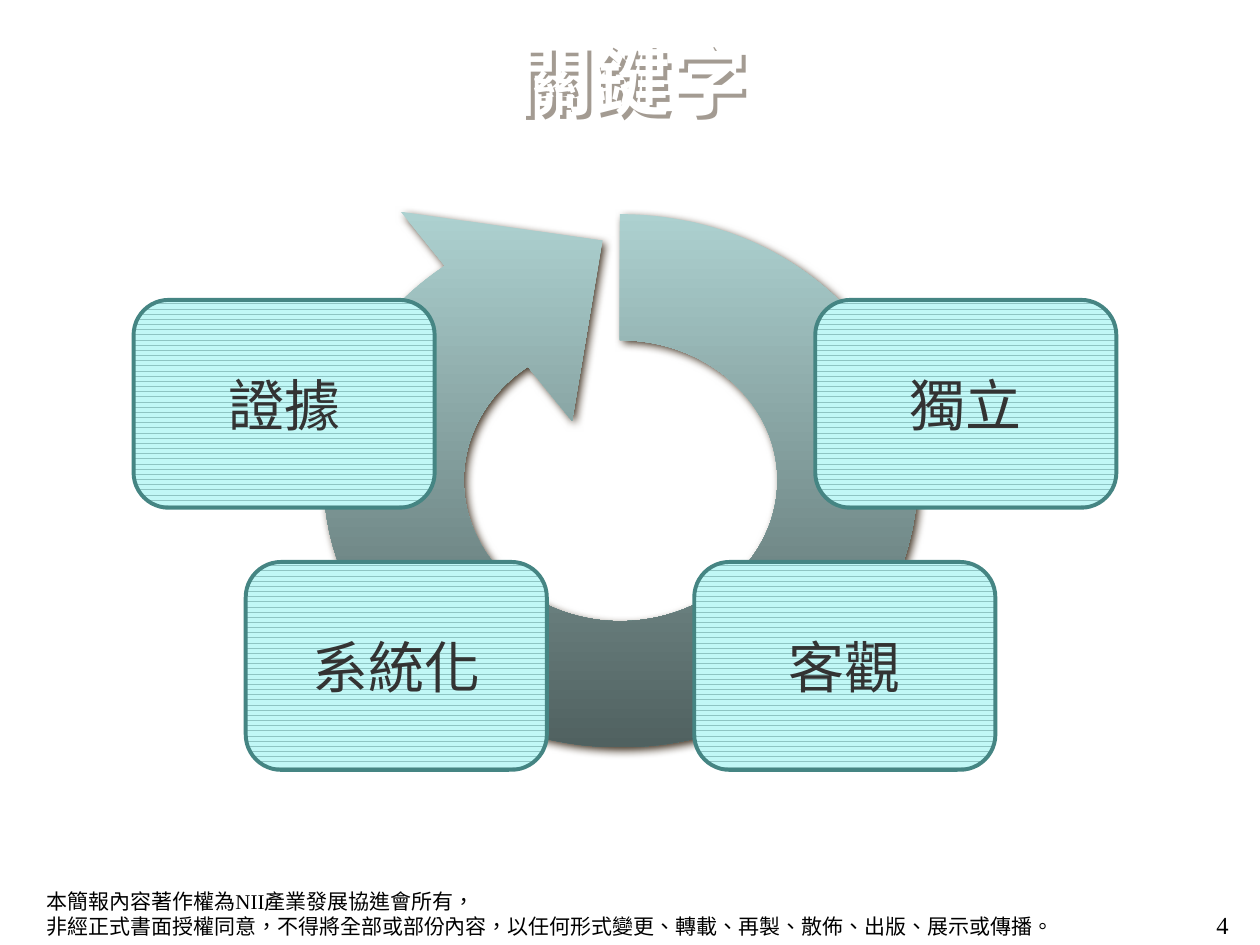
from dataclasses import dataclass

from lxml import etree
from pptx import Presentation
from pptx.dml.color import RGBColor
from pptx.enum.dml import MSO_PATTERN as Pattern
from pptx.enum.lang import MSO_LANGUAGE_ID as Lang
from pptx.enum.shapes import MSO_SHAPE as Shape
from pptx.enum.text import MSO_ANCHOR as Anchor, PP_ALIGN as Align
from pptx.oxml.ns import qn
from pptx.util import Inches, Pt

SERIF, SANS = "Times New Roman", "Arial"
BASE = {"language_id": Lang.TRADITIONAL_CHINESE}
TITLE = BASE | {"name": SANS, "size": Pt(44), "bold": True}
LABEL = BASE | {"name": SANS, "size": Pt(32)}
NOTE = BASE | {"name": SERIF, "size": Pt(12)}
PAGE = BASE | {"name": SERIF, "size": Pt(14)}


@dataclass
class Card:
    text: str
    left: float
    top: float


CARDS = [
    Card("獨立", 6.47, 2.38),
    Card("證據", 1.06, 2.38),
    Card("系統化", 1.95, 4.46),
    Card("客觀", 5.51, 4.46),
]
CARD_SIZE = (2.39, 1.65)

# Ring outline: one point is a line, three points are a curve.
MID = (4.925, 3.805)
START = (4.19, 2.91)
RING = [
    [(3.87, 3.12), (3.68, 3.46), (3.68, 3.81)],
    [(3.68, 4.43), (4.24, 4.93), (4.92, 4.93)],
    [(5.61, 4.93), (6.17, 4.43), (6.17, 3.81)],
    [(6.17, 3.2), (5.61, 2.7), (4.92, 2.7)],
    [(4.92, 1.7)],
    [(6.23, 1.7), (7.28, 2.65), (7.28, 3.81)],
    [(7.28, 4.98), (6.23, 5.93), (4.92, 5.93)],
    [(3.62, 5.93), (2.57, 4.98), (2.57, 3.81)],
    [(2.57, 3.14), (2.93, 2.51), (3.53, 2.11)],
    [(3.18, 1.68)],
    [(4.78, 1.91)],
    [(4.54, 3.34)],
]


def rgb(code: str) -> RGBColor:
    return RGBColor.from_string(code)


def write(shape, text: str, form: dict, color: str, align, anchor) -> None:
    frame = shape.text_frame
    frame.word_wrap = True
    frame.vertical_anchor = anchor
    frame.text = text
    para = frame.paragraphs[0]
    para.alignment = align
    for run in para.runs:
        for key, value in form.items():
            setattr(run.font, key, value)
        run.font.color.rgb = rgb(color)


def add_text(slide, box: tuple, text: str, form: dict, color: str = "000000",
             align=Align.LEFT, anchor=Anchor.TOP):
    shape = slide.shapes.add_textbox(*map(Inches, box))
    write(shape, text, form, color, align, anchor)
    return shape


def cast(shape, color: str, blur: float, dist: float) -> None:
    """Add an outer shadow falling to the lower right; lengths in points."""
    shape.shadow.inherit = False
    shade = etree.SubElement(
        shape._element.spPr.find(qn("a:effectLst")), qn("a:outerShdw"),
        blurRad=str(Pt(blur)), dist=str(Pt(dist)), dir=str(45 * 60000),
        algn="ctr", rotWithShape="0")
    etree.SubElement(shade, qn("a:srgbClr"), val=color)


def turn(point: tuple) -> tuple:
    """Turn a point a quarter back, to be undone by the shape's rotation."""
    x, y = point
    return Inches(MID[0] + y - MID[1]), Inches(MID[1] - x + MID[0])


def bend(shape, parts: list) -> None:
    """Join each run of three line points into one curve."""
    lines = iter(list(shape._element.spPr.iter(qn("a:lnTo"))))
    for part in parts:
        first, *rest = [next(lines) for _ in part]
        if rest:
            first.tag = qn("a:cubicBezTo")
            for line in rest:
                first.append(line[0])
                line.getparent().remove(line)


def add_ring(slide) -> None:
    path = slide.shapes.build_freeform(*turn(START))
    path.add_line_segments([turn(p) for part in RING for p in part], close=True)
    ring = path.convert_to_shape()
    bend(ring, RING)
    ring.rotation = 90
    ring.line.fill.background()
    ring.fill.gradient()
    ring.fill.gradient_angle = 0
    for stop, code in zip(ring.fill.gradient_stops, ("ADD1D0", "506160")):
        stop.color.rgb = rgb(code)
    cast(ring, "463828", 5, 2.8)


def add_card(slide, card: Card) -> None:
    box = slide.shapes.add_shape(
        Shape.ROUNDED_RECTANGLE, *map(Inches, (card.left, card.top, *CARD_SIZE)))
    box.adjustments[0] = 0.17
    box.shadow.inherit = False
    box.fill.patterned()
    box.fill.pattern = Pattern.DARK_HORIZONTAL
    box.fill.fore_color.rgb = rgb("C1F7F6")
    box.fill.back_color.rgb = rgb("8EC4C3")
    box.line.color.rgb = rgb("458583")
    box.line.width = Pt(2.25)
    write(box, card.text, LABEL, "333333", Align.CENTER, Anchor.MIDDLE)


def main() -> None:
    deck = Presentation()
    deck.slide_width, deck.slide_height = Inches(10), Inches(7.5)
    slide = deck.slides.add_slide(deck.slide_layouts[6])

    add_text(slide, (0.27, 7, 8.82, 0.5),
             "本簡報內容著作權為NII產業發展協進會所有，\v"
             "非經正式書面授權同意，不得將全部或部份內容，"
             "以任何形式變更、轉載、再製、散佈、出版、展示或傳播。", NOTE)
    add_text(slide, (7.52, 7.17, 2.33, 0.52), "4", PAGE, align=Align.RIGHT)
    title = add_text(slide, (0.04, 0.13, 9.96, 0.99), "關鍵字", TITLE, "FFFFFF",
                     Align.CENTER, Anchor.MIDDLE)
    cast(title, "A39B92", 0, 2.8)

    add_ring(slide)
    for card in CARDS:
        add_card(slide, card)
    deck.save("out.pptx")


if __name__ == "__main__":
    main()
